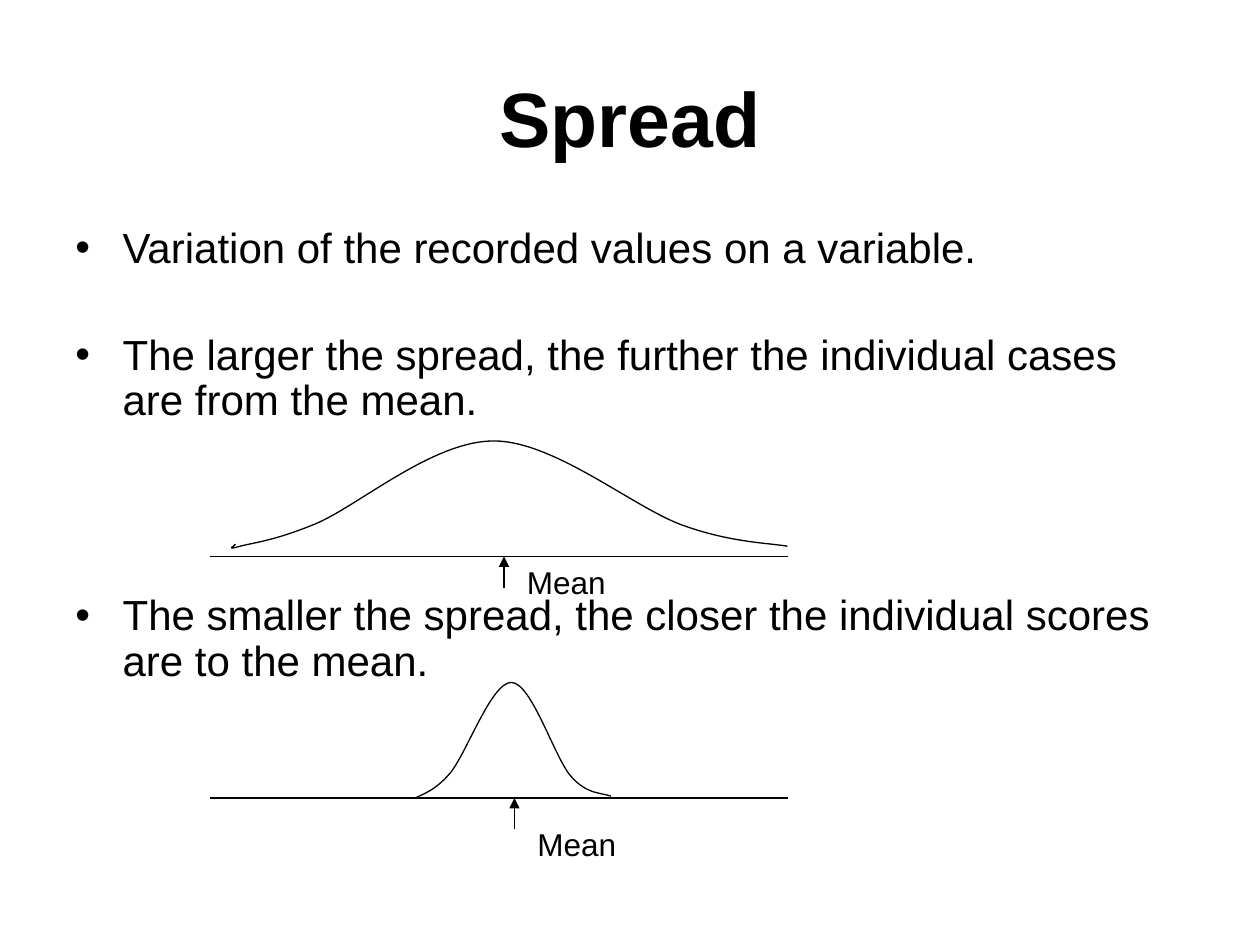
import pptx
import pptx.dml.color
import pptx.enum.shapes
import pptx.enum.text
import pptx.oxml.ns
import pptx.util
from dataclasses import dataclass
from typing import NamedTuple

Pt = pptx.util.Pt
qn = pptx.oxml.ns.qn
Align = pptx.enum.text.PP_ALIGN
Anchor = pptx.enum.text.MSO_ANCHOR


@dataclass(frozen=True)
class Theme:
    font: str = "Arial"
    ink: pptx.dml.color.RGBColor = pptx.dml.color.RGBColor(0, 0, 0)
    title: float = 44
    body: float = 24
    label: float = 18
    line: float = 0.75


class Box(NamedTuple):
    x: float
    y: float
    w: float
    h: float


class Bullet(NamedTuple):
    text: str
    before: float


class Bell(NamedTuple):
    """Cubic Bezier points (start, then three per segment) above an axis."""
    points: list[tuple[float, float]]
    axis_y: float
    mean_x: float
    label: Box


THEME = Theme()
AXIS_LEFT, AXIS_RIGHT = 120, 450
ARROW_LENGTH = 18

BULLETS = [
    Bullet("Variation of the recorded values on a variable.", 0),
    Bullet("The larger the spread, the further the individual cases are from the mean.", 35.5),
    Bullet("The smaller the spread, the closer the individual scores are to the mean.", 97),
]

BELLS = [
    Bell([(134.6, 311),
          (134.6, 311.8), (128.2, 314.6), (136.1, 312.5),
          (143.3, 310.3), (155.5, 309.6), (180, 299.5),
          (204.5, 289.4), (247, 252), (282.2, 252),
          (316.8, 252), (362.2, 290.2), (390.2, 300.2),
          (418.3, 310.3), (439.9, 310.3), (450, 312.2)],
         318, 288, Box(294, 318, 108, 28.8)),
    Bell([(236.9, 456.3),
          (239.8, 454.3), (247.7, 452.9), (257, 442.1),
          (266.4, 431.3), (280.8, 389.7), (292.3, 390),
          (303.8, 390.2), (316.8, 432.7), (326.2, 443.5),
          (335.5, 454.3), (344.2, 452.9), (349.2, 455)],
         456, 294, Box(300, 468, 108, 28.8)),
]


def add_child(parent, tag: str, **attributes: str):
    child = parent.makeelement(qn(tag), attributes)
    parent.append(child)
    return child


def add_box(s, box: Box, anchor=Anchor.TOP):
    tf = s.shapes.add_textbox(*map(Pt, box)).text_frame
    tf.word_wrap = True
    tf.vertical_anchor = anchor
    return tf


def add_run(p, text: str, size: float, bold: bool = False) -> None:
    r = p.add_run()
    r.text = text
    r.font.name = THEME.font
    r.font.size = Pt(size)
    r.font.bold = bold
    r.font.color.rgb = THEME.ink


def add_bullets(s, box: Box, bullets: list[Bullet]) -> None:
    tf = add_box(s, box)
    for i, bullet in enumerate(bullets):
        p = tf.add_paragraph() if i else tf.paragraphs[0]
        p.line_spacing = 0.9
        p.space_before = Pt(bullet.before)
        pPr = p._p.get_or_add_pPr()
        pPr.set("marL", str(Pt(27)))
        pPr.set("indent", str(Pt(-27)))
        add_child(pPr, "a:buFont", typeface=THEME.font)
        add_child(pPr, "a:buChar", char="•")
        add_run(p, bullet.text, THEME.body)
        add_child(p._p, "a:endParaRPr", sz=str(int(THEME.body * 100)))


def add_line(s, x1: float, y1: float, x2: float, y2: float, arrow: bool = False) -> None:
    line = s.shapes.add_connector(pptx.enum.shapes.MSO_CONNECTOR.STRAIGHT,
                                  Pt(x1), Pt(y1), Pt(x2), Pt(y2))
    line.line.color.rgb = THEME.ink
    line.line.width = Pt(THEME.line)
    add_child(line._element.spPr, "a:effectLst")
    if arrow:
        add_child(line.line._get_or_add_ln(), "a:tailEnd", type="triangle")


def add_curve(s, points: list[tuple[float, float]]) -> None:
    builder = s.shapes.build_freeform(*map(Pt, points[0]))
    builder.add_line_segments([(Pt(x), Pt(y)) for x, y in points[1:]], close=False)
    sp = builder.convert_to_shape()

    # Turn every three line segments into one Bezier segment
    segments = list(sp._element.iter(qn("a:lnTo")))
    outline = segments[0].getparent()
    for i in range(0, len(segments), 3):
        curve = add_child(outline, "a:cubicBezTo")
        for segment in segments[i:i + 3]:
            curve.append(segment[0])
            outline.remove(segment)

    sp.shadow.inherit = False
    sp.fill.background()
    sp.line.color.rgb = THEME.ink
    sp.line.width = Pt(THEME.line)


def add_bell(s, bell: Bell) -> None:
    add_curve(s, bell.points)
    add_line(s, AXIS_LEFT, bell.axis_y, AXIS_RIGHT, bell.axis_y)
    add_line(s, bell.mean_x, bell.axis_y + ARROW_LENGTH, bell.mean_x, bell.axis_y, arrow=True)
    add_run(add_box(s, bell.label).paragraphs[0], "Mean", THEME.label)


def main() -> None:
    prs = pptx.Presentation()
    prs.slide_width, prs.slide_height = Pt(720), Pt(540)
    s = prs.slides.add_slide(prs.slide_layouts[6])

    # Title
    p = add_box(s, Box(36, 21.6, 648, 90), Anchor.MIDDLE).paragraphs[0]
    p.alignment = Align.CENTER
    add_run(p, "Spread", THEME.title, bold=True)

    # Bulleted text, spaced to leave room for the curves
    add_bullets(s, Box(36, 126, 648, 356.4), BULLETS)

    # Wide and narrow distributions
    for bell in BELLS:
        add_bell(s, bell)

    prs.save("out.pptx")


if __name__ == "__main__":
    main()
